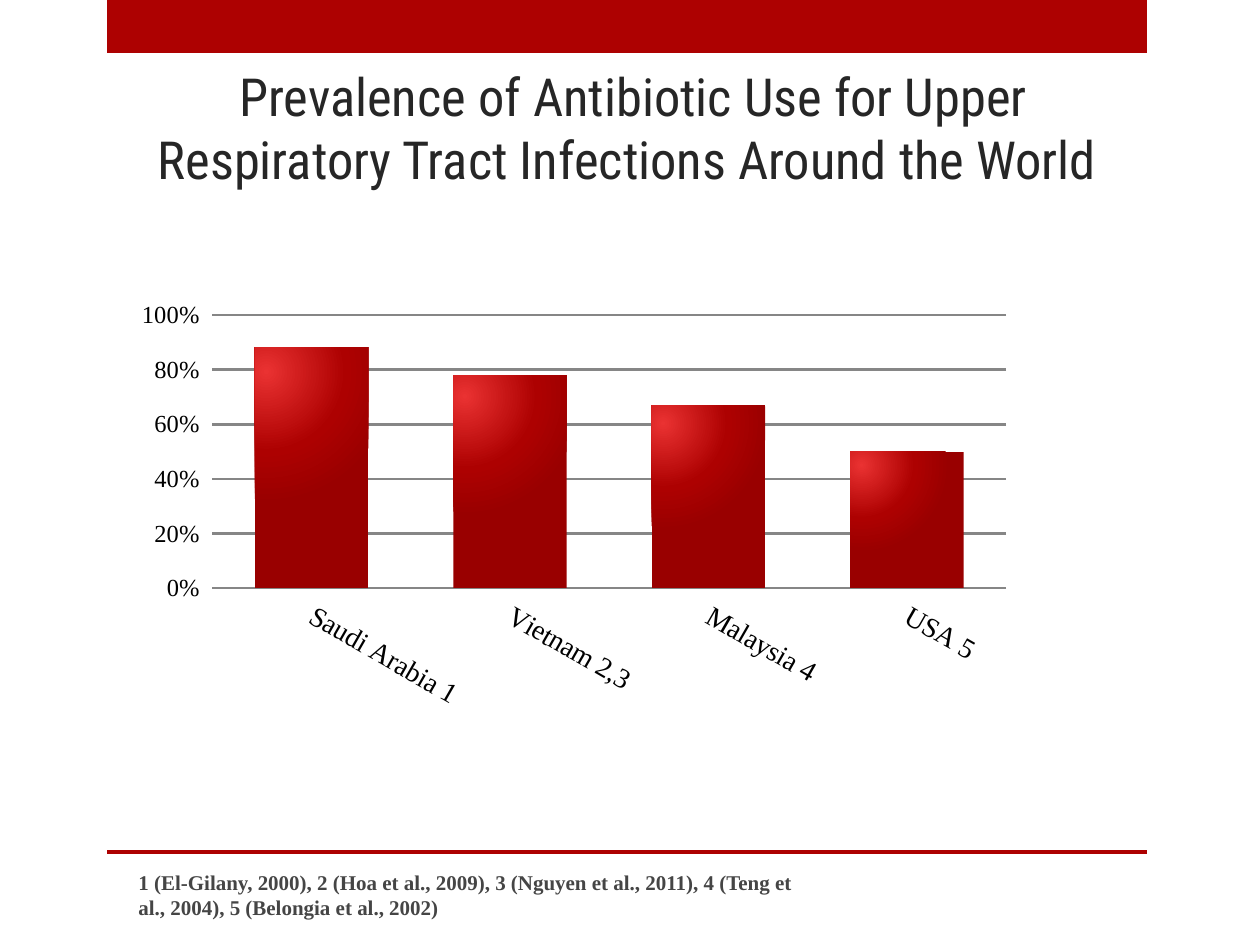
from lxml.etree import SubElement
from pptx import Presentation
from pptx.chart.data import CategoryChartData
from pptx.dml.color import RGBColor
from pptx.enum.chart import XL_CHART_TYPE as ChartType
from pptx.enum.chart import XL_TICK_LABEL_POSITION as LabelPosition
from pptx.enum.chart import XL_TICK_MARK as TickMark
from pptx.enum.shapes import MSO_SHAPE as Shape
from pptx.enum.text import MSO_ANCHOR as Anchor
from pptx.enum.text import PP_ALIGN as Align
from pptx.oxml import parse_xml
from pptx.oxml.ns import nsdecls, qn
from pptx.util import Pt

PX = 914400 / 126
RED = RGBColor(0xAD, 0x01, 0x01)
LIGHT_RED = RGBColor(0xEA, 0x32, 0x32)
DARK_RED = RGBColor(0x99, 0x00, 0x00)
TITLE_GREY = RGBColor(0x26, 0x26, 0x26)
NOTE_GREY = RGBColor(0x45, 0x45, 0x45)
GRID_GREY = RGBColor(0x86, 0x86, 0x86)
BLACK = RGBColor(0, 0, 0)
SERIF = "Times New Roman"


def px(*lengths):
    return [round(length * PX) for length in lengths]


def write(box, text, font, size, color, bold=False, align=Align.LEFT, anchor=Anchor.MIDDLE):
    frame = box.text_frame
    frame.word_wrap = True
    frame.vertical_anchor = anchor
    para = frame.paragraphs[0]
    para.alignment = align
    span = para.add_run()
    span.text = text
    span.font.name = font
    span.font.size = Pt(size)
    span.font.bold = bold
    span.font.color.rgb = color


deck = Presentation()
deck.slide_width, deck.slide_height = px(1260, 945)
page = deck.slides.add_slide(deck.slide_layouts[5])

# Red band at the top and rule above the references
for top, height in ((0, 53), (850, 4)):
    band = page.shapes.add_shape(Shape.RECTANGLE, *px(107, top, 1040, height))
    band.shadow.inherit = False
    band.fill.solid()
    band.fill.fore_color.rgb = RED
    band.line.fill.background()

# Title
title = page.shapes.title
title.left, title.top, title.width, title.height = px(105, 26, 1057, 170)
write(title, "Prevalence of Antibiotic Use for Upper Respiratory Tract Infections Around the World ",
      "Roboto Condensed", 30, TITLE_GREY, align=Align.CENTER, anchor=Anchor.BOTTOM)

# References
references = page.shapes.add_textbox(*px(126, 844, 684, 101))
write(references, "1 (El-Gilany, 2000), 2 (Hoa et al., 2009), 3 (Nguyen et al., 2011), "
      "4 (Teng et al., 2004), 5 (Belongia et al., 2002)", SERIF, 12, NOTE_GREY, bold=True)

# Column chart
data = CategoryChartData(number_format="0%")
data.categories = ["Saudi Arabia 1", "Vietnam 2,3", "Malaysia 4", "USA 5"]
data.add_series("Series 1", [0.88, 0.78, 0.67, 0.5])
chart = page.shapes.add_chart(ChartType.COLUMN_CLUSTERED, *px(126, 242, 900, 481), data).chart
chart.has_legend = False
chart.has_title = False
chart.font.name = SERIF
chart.font.size = Pt(18)
chart.font.color.rgb = BLACK

plot = chart.plots[0]
plot.gap_width = 75
plot.overlap = -25
plot.vary_by_categories = False

# Columns shaded from a light upper left corner
series_format = plot.series[0].format
series_format.fill.solid()
series_format.fill.fore_color.rgb = RED
properties = plot.series[0]._element.find(qn("c:spPr"))
stops = "".join(
    f'<a:gs pos="{place}"><a:srgbClr val="{color}"/></a:gs>'
    for place, color in ((0, LIGHT_RED), (60000, RED), (100000, DARK_RED)))
gradient = parse_xml(
    f'<a:gradFill {nsdecls("a")} rotWithShape="1"><a:gsLst>{stops}</a:gsLst>'
    '<a:path path="circle"><a:fillToRect l="10000" t="10000" r="90000" b="90000"/></a:path>'
    '</a:gradFill>')
properties.replace(properties.find(qn("a:solidFill")), gradient)

# Axes
countries, share = chart.category_axis, chart.value_axis
for axis, size in ((countries, 16), (share, 14)):
    labels = axis.tick_labels.font
    labels.name = SERIF
    labels.size = Pt(size)
    labels.color.rgb = BLACK
countries.tick_label_position = LabelPosition.LOW
countries.major_tick_mark = TickMark.NONE
countries._element.find(qn("c:txPr")).find(qn("a:bodyPr")).set("rot", "1800000")
share.minimum_scale, share.maximum_scale, share.major_unit = 0, 1, 0.2
share.tick_labels.number_format = "0%"
share.tick_labels.number_format_is_linked = False
share.major_tick_mark = TickMark.OUTSIDE
share.format.line.fill.background()
share.has_major_gridlines = True
for line in (share.major_gridlines.format.line, countries.format.line):
    line.color.rgb = GRID_GREY
    line.width = Pt(1.5)

# Place of the plot area inside the chart
area = chart._chartSpace.chart.plotArea
layout = area.find(qn("c:layout"))
if layout is None:
    layout = parse_xml(f'<c:layout {nsdecls("c")}/>')
    area.insert(0, layout)
manual = SubElement(layout, qn("c:manualLayout"))
for tag, value in (("layoutTarget", "inner"), ("xMode", "edge"), ("yMode", "edge"),
                   ("x", 0.096), ("y", 0.152), ("w", 0.882), ("h", 0.568)):
    SubElement(manual, qn(f"c:{tag}")).set("val", str(value))

deck.save("out.pptx")
